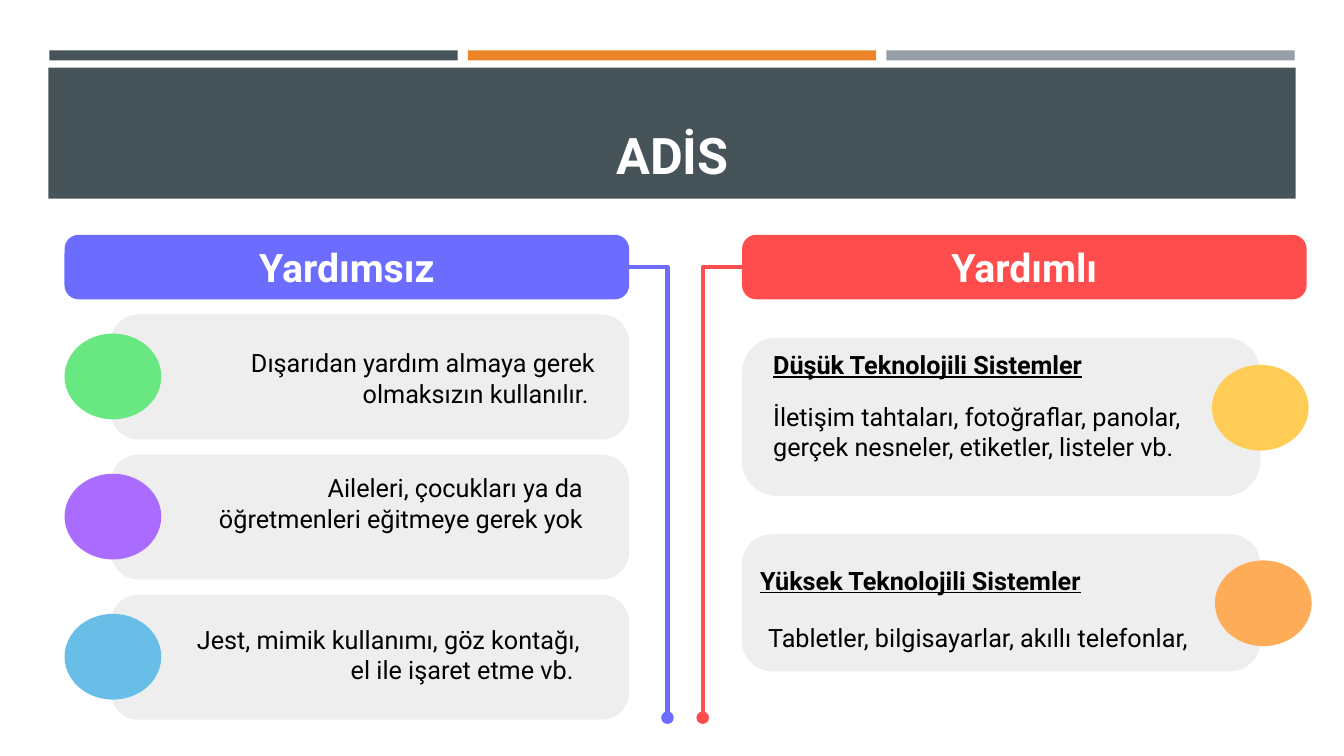
from dataclasses import dataclass

from lxml import etree
from pptx import Presentation
from pptx.dml.color import RGBColor
from pptx.enum.shapes import MSO_CONNECTOR, MSO_SHAPE
from pptx.enum.text import MSO_ANCHOR, PP_ALIGN
from pptx.oxml.ns import qn
from pptx.util import Pt

RECTANGLE = MSO_SHAPE.RECTANGLE
ROUNDED = MSO_SHAPE.ROUNDED_RECTANGLE
OVAL = MSO_SHAPE.OVAL
ELBOW = MSO_CONNECTOR.ELBOW
TOP, MIDDLE, BOTTOM = MSO_ANCHOR.TOP, MSO_ANCHOR.MIDDLE, MSO_ANCHOR.BOTTOM
LEFT, CENTER, RIGHT = PP_ALIGN.LEFT, PP_ALIGN.CENTER, PP_ALIGN.RIGHT
LEFT_SIDE, RIGHT_SIDE = 1, 3
EMU_PER_PX = 9144


@dataclass(frozen=True)
class Theme:
    font: str = "Roboto"
    title_size: int = 36
    header_size: int = 28
    body_size: int = 18
    white: str = "FFFFFF"
    black: str = "000000"
    slate: str = "465359"
    orange: str = "ED8428"
    grey: str = "969FA7"
    card: str = "EEEEEE"
    unaided: str = "6C6CFF"
    aided: str = "FF4D4E"
    green: str = "69E781"
    purple: str = "AA6CFF"
    blue: str = "69BEE7"
    yellow: str = "FFCD55"
    apricot: str = "FFAC59"


def px(*lengths):
    return [length * EMU_PER_PX for length in lengths]


class SlideBuilder:
    def __init__(self, page, theme):
        self.page = page
        self.theme = theme

    def block(self, kind, area, color):
        shape = self.page.shapes.add_shape(kind, *px(*area))
        shape.shadow.inherit = False
        shape.fill.solid()
        shape.fill.fore_color.rgb = RGBColor.from_string(color)
        shape.line.fill.background()
        if kind == ROUNDED:
            shape.adjustments[0] = 0.22
        return shape

    def fill_text(self, box, words, size, color, align, anchor,
                  bold=False, underline=False, inset=10):
        frame = box.text_frame
        frame.word_wrap = True
        frame.vertical_anchor = anchor
        frame.margin_left = frame.margin_right = px(10)[0]
        frame.margin_top = frame.margin_bottom = px(inset)[0]
        para = frame.paragraphs[0]
        para.alignment = align
        span = para.add_run()
        span.text = words
        span.font.name = self.theme.font
        span.font.size = Pt(size)
        span.font.bold = bold
        span.font.underline = underline
        span.font.color.rgb = RGBColor.from_string(color)

    def title(self, area, words):
        box = self.page.shapes.title
        box.left, box.top, box.width, box.height = px(*area)
        self.fill_text(box, words, self.theme.title_size, self.theme.white,
                       CENTER, BOTTOM, bold=True, inset=5)
        tree = box.element.getparent()
        tree.remove(box.element)
        tree.append(box.element)

    def text(self, area, words, align=LEFT, heading=False):
        box = self.page.shapes.add_textbox(*px(*area))
        self.fill_text(box, words, self.theme.body_size, self.theme.black, align,
                       MIDDLE if heading else TOP, bold=heading, underline=heading)

    def header(self, area, words, color):
        shape = self.block(ROUNDED, area, color)
        self.fill_text(shape, words, self.theme.header_size, self.theme.white,
                       CENTER, MIDDLE, bold=True)
        return shape

    def branch(self, header, side, start, end, color):
        connector = self.page.shapes.add_connector(ELBOW, *px(*start, *end))
        connector.begin_connect(header, side)
        connector.line.width = Pt(3)
        connector.line.color.rgb = RGBColor.from_string(color)
        properties = connector.element.spPr
        properties.find(qn("a:prstGeom")).set("prst", "bentConnector2")
        line = properties.find(qn("a:ln"))
        etree.SubElement(line, qn("a:round"))
        etree.SubElement(line, qn("a:tailEnd"), type="oval")
        etree.SubElement(properties, qn("a:effectLst"))


def main():
    deck = Presentation()
    deck.slide_width, deck.slide_height = px(1333, 750)
    theme = Theme()
    builder = SlideBuilder(deck.slides.add_slide(deck.slide_layouts[5]), theme)

    for column, color in enumerate((theme.slate, theme.orange, theme.grey)):
        builder.block(RECTANGLE, (49 + 415 * column, 50, 405, 10), color)
    builder.block(RECTANGLE, (48, 67, 1237, 130), theme.slate)
    builder.title((64, 77, 1206, 111), "ADİS")

    unaided = builder.header((64, 233, 560, 64), "Yardımsız", theme.unaided)
    aided = builder.header((736, 233, 560, 64), "Yardımlı", theme.aided)
    builder.branch(unaided, RIGHT_SIDE, (624, 265), (662, 712), theme.unaided)
    builder.branch(aided, LEFT_SIDE, (736, 265), (697, 712), theme.aided)

    unaided_rows = (
        (theme.green, 195, 335, "Dışarıdan yardım almaya gerek olmaksızın kullanılır. "),
        (theme.purple, 183, 459, "Aileleri, çocukları ya da öğretmenleri eğitmeye gerek yok"),
        (theme.blue, 180, 609, "Jest, mimik kullanımı, göz kontağı, el ile işaret etme vb. "),
    )
    for row, (color, left, top, words) in enumerate(unaided_rows):
        card_top = 312 + 139 * row
        builder.block(ROUNDED, (110, card_top, 514, 124), theme.card)
        builder.block(OVAL, (64, card_top + 19, 96, 85), color)
        builder.text((left, top, 405, 55), words, RIGHT)

    aided_rows = (
        ((736, 335, 514, 157), (1202, 362, 96, 85), theme.yellow,
         (757, 334, 396, 55), "Düşük Teknolojili Sistemler",
         (757, 388, 448, 93),
         "İletişim tahtaları, fotoğraflar, panolar, gerçek nesneler, etiketler, listeler vb."),
        ((736, 530, 514, 136), (1205, 556, 96, 85), theme.apricot,
         (744, 548, 439, 55), "Yüksek Teknolojili Sistemler",
         (752, 607, 481, 55), "Tabletler, bilgisayarlar, akıllı telefonlar,"),
    )
    for card, dot, color, heading_area, heading, body_area, body in aided_rows:
        builder.block(ROUNDED, card, theme.card)
        builder.block(OVAL, dot, color)
        builder.text(heading_area, heading, heading=True)
        builder.text(body_area, body)

    deck.save("out.pptx")


if __name__ == "__main__":
    main()
